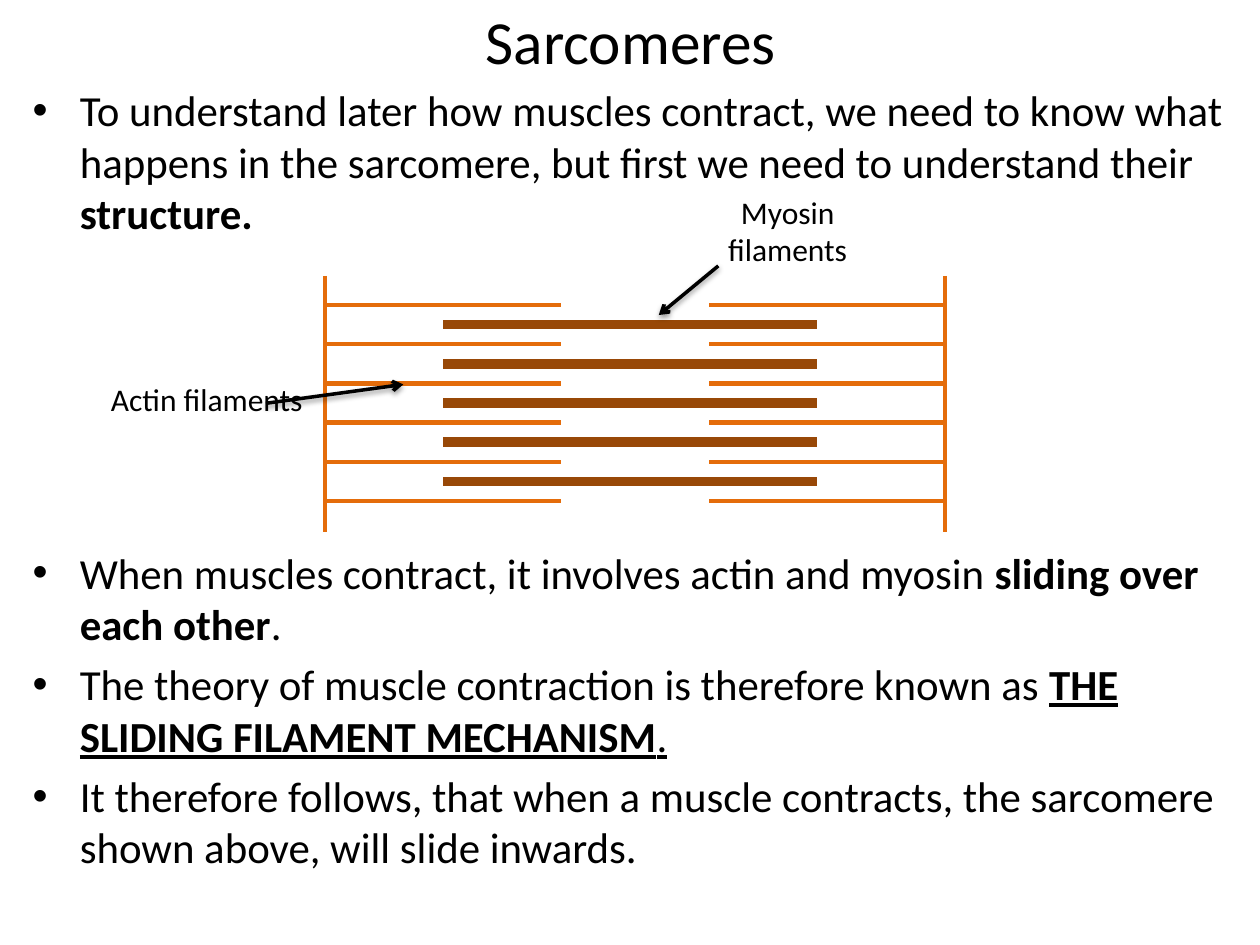
"""Build the slide on the structure of sarcomeres."""
from typing import NamedTuple

from lxml.etree import SubElement as Sub
from pptx import Presentation as Deck
from pptx.dml.color import RGBColor as Rgb
from pptx.enum.shapes import MSO_CONNECTOR as Link
from pptx.enum.text import MSO_ANCHOR as Anchor, PP_ALIGN as Align
from pptx.oxml.ns import qn
from pptx.util import Cm, Pt

BLACK, ACTIN, MYOSIN = "000000", "E46C0A", "984807"
LEFT, RIGHT, TOP, STEP = 6.55, 19.05, 6.15, 0.79


class Box(NamedTuple):
    left: float
    top: float
    width: float
    height: float


class Line(NamedTuple):
    x1: float
    y1: float
    x2: float
    y2: float
    color: str
    width: float
    arrow: bool = False


class Label(NamedTuple):
    text: str
    box: Box
    size: float
    anchor: Anchor = Anchor.TOP


class Run(NamedTuple):
    text: str
    bold: bool = False
    under: bool = False


class Point(NamedTuple):
    space: float
    runs: list[Run]


LABELS = [
    Label("Sarcomeres", Box(0.41, 0.41, 24.61, 0.79), 35, Anchor.MIDDLE),
    Label("Actin filaments", Box(1.98, 7.54, 4.38, 1.8), 18),
    Label("Myosin filaments", Box(13.69, 3.76, 4.38, 1.8), 18),
]
POINTS = [
    Point(0, [
        Run("To understand later how muscles contract, we need to know what happens "
            "in the sarcomere, but first we need to understand their "),
        Run("structure.", bold=True),
    ]),
    Point(176, [
        Run("When muscles contract, it involves actin and myosin "),
        Run("sliding over each other", bold=True),
        Run("."),
    ]),
    Point(5, [
        Run("The theory of muscle contraction is therefore known as "),
        Run("THE SLIDING FILAMENT MECHANISM", bold=True, under=True),
        Run(".", under=True),
    ]),
    Point(5, [
        Run("It therefore follows, that when a muscle contracts, the sarcomere "
            "shown above, will slide inwards."),
    ]),
]
ROWS = [TOP + STEP * i for i in range(6)]
LINES = [
    *(Line(8.94, y + STEP / 2, 16.46, y + STEP / 2, MYOSIN, 5.5) for y in ROWS[:-1]),
    *(Line(a, y, b, y, ACTIN, 2.5)
      for a, b in ((LEFT, 11.3), (14.3, RIGHT)) for y in ROWS),
    *(Line(x, 5.56, x, 10.72, ACTIN, 2.5) for x in (LEFT, RIGHT)),
]
ARROWS = [
    Line(5.36, 8.13, 8.13, 7.75, BLACK, 2, True),
    Line(14.48, 5.36, 13.28, 6.35, BLACK, 2, True),
]


def paint(fmt, color: str) -> None:
    """Set a colour from a hex string."""
    fmt.rgb = Rgb.from_string(color)


def style(para, size: float) -> None:
    """Set the font of a paragraph."""
    font = para.font
    font.name, font.size = "Calibri", Pt(size)
    paint(font.color, BLACK)


def add_frame(slide, box: Box):
    """Add a wrapping text box and return its frame."""
    frame = slide.shapes.add_textbox(*map(Cm, box)).text_frame
    frame.word_wrap = True
    return frame


def add_label(slide, label: Label) -> None:
    """Add a centred line of text."""
    frame = add_frame(slide, label.box)
    frame.vertical_anchor = label.anchor
    para = frame.paragraphs[0]
    para.text, para.alignment = label.text, Align.CENTER
    style(para, label.size)


def add_points(slide, box: Box, points: list[Point]) -> None:
    """Add the bulleted text."""
    frame = add_frame(slide, box)
    for i, point in enumerate(points):
        para = frame.add_paragraph() if i else frame.paragraphs[0]
        para.space_before = Pt(point.space)
        style(para, 24.5)
        props = para._p.get_or_add_pPr()
        props.set("marL", str(Cm(0.95)))
        props.set("indent", str(-Cm(0.95)))
        font = props.find(qn("a:defRPr"))
        for tag, key, value in (("a:buFont", "typeface", "Arial"),
                                ("a:buChar", "char", "•")):
            bullet = Sub(props, qn(tag))
            bullet.set(key, value)
            font.addprevious(bullet)
        for part in point.runs:
            run = para.add_run()
            run.text = part.text
            run.font.bold, run.font.underline = part.bold, part.under


def add_line(slide, line: Line) -> None:
    """Add a straight line, with a head and a soft shadow if it is an arrow."""
    ends = map(Cm, (line.x1, line.y1, line.x2, line.y2))
    shape = slide.shapes.add_connector(Link.STRAIGHT, *ends)
    shape.line.width = Pt(line.width)
    paint(shape.line.color, line.color)
    props = shape._element.spPr
    effects = Sub(props, qn("a:effectLst"))
    if line.arrow:
        Sub(props.find(qn("a:ln")), qn("a:tailEnd"), type="arrow")
        shadow = Sub(effects, qn("a:outerShdw"), blurRad=str(Pt(3.1)),
                     dist=str(Pt(1.6)), dir="5400000", rotWithShape="0")
        tint = Sub(shadow, qn("a:srgbClr"), val=BLACK)
        Sub(tint, qn("a:alpha"), val="38000")


def main() -> None:
    """Draw the slide and save it."""
    deck = Deck()
    deck.slide_width, deck.slide_height = Cm(25.4), Cm(19.05)
    slide = deck.slides.add_slide(deck.slide_layouts[6])
    add_points(slide, Box(0.41, 1.57, 24.61, 17.07), POINTS)
    for line in LINES:
        add_line(slide, line)
    for label in LABELS:
        add_label(slide, label)
    for arrow in ARROWS:
        add_line(slide, arrow)
    deck.save("out.pptx")


if __name__ == "__main__":
    main()
